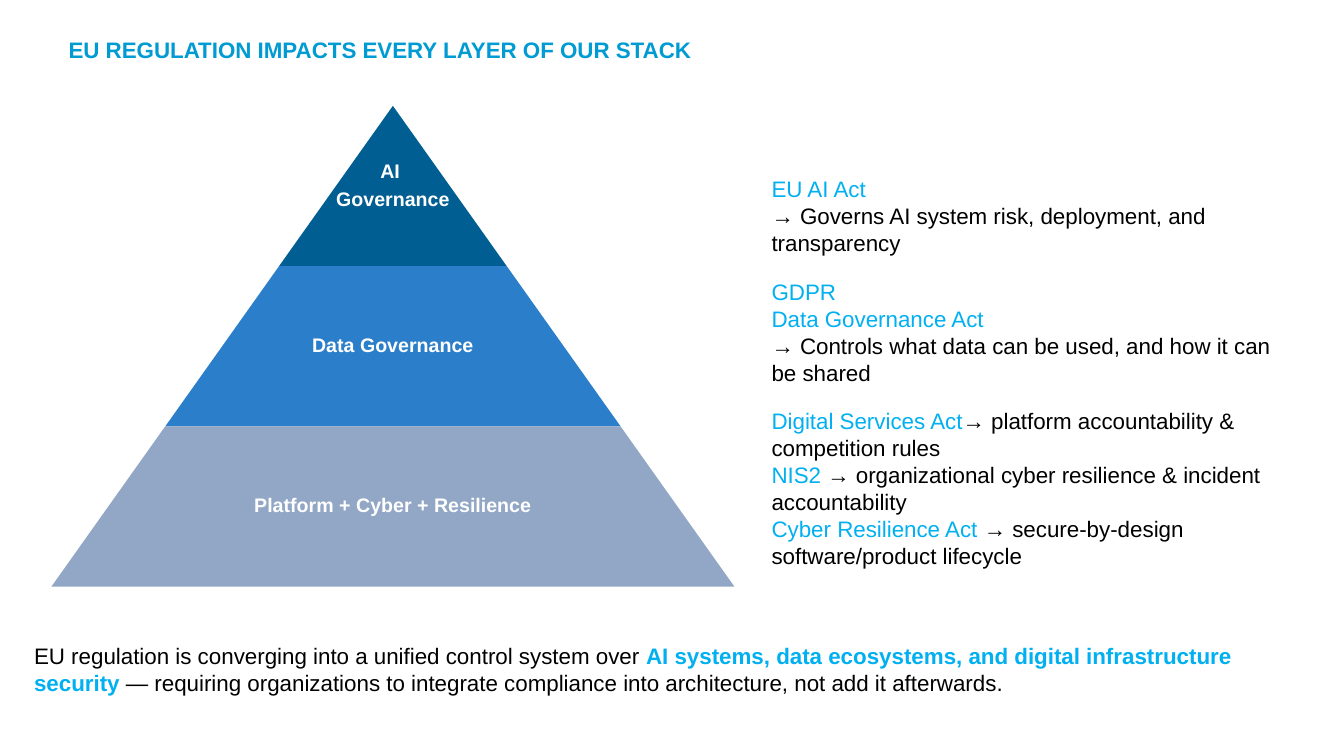
from dataclasses import dataclass

import pptx
import pptx.dml.color
import pptx.enum.shapes
import pptx.enum.text
import pptx.util

Inches = pptx.util.Inches
Pt = pptx.util.Pt
Anchor = pptx.enum.text.MSO_ANCHOR
Align = pptx.enum.text.PP_ALIGN

COLORS = {
    "title": "009BD2",
    "accent": "00B0F0",
    "body": "000000",
    "label": "FFFFFF",
    "ai": "005E93",
    "data": "2B7EC9",
    "platform": "91A7C5",
}
FONT = "Arial"
APEX_X, APEX_Y = 3.9, 1.05
TIER_HEIGHT, TIER_INSET = 1.59, 1.13
REGULATION_LEFT, REGULATION_WIDTH = 7.56, 5.29


@dataclass(frozen=True)
class Span:
    text: str
    color: str = "body"
    bold: bool = False
    break_after: bool = False


@dataclass(frozen=True)
class TextBlock:
    left: float
    top: float
    width: float
    height: float
    paragraphs: list[list[Span]]
    size: float = 16
    margins: tuple[float, float] = (0.1, 0.05)
    anchor: Anchor = Anchor.TOP
    align: Align = Align.LEFT
    line_spacing: float = 1.0
    space_before: float = 0


@dataclass(frozen=True)
class Tier:
    lines: list[str]
    color: str
    label_width: float


TIERS = [
    Tier(["AI ", "Governance"], "ai", 2.26),
    Tier(["Data Governance"], "data", 2.94),
    Tier(["Platform + Cyber + Resilience"], "platform", 4.4),
]

TEXT_BLOCKS = [
    TextBlock(0.24, 6.32, 12.96, 0.64, [[
        Span("EU regulation is converging into a unified control system over "),
        Span("AI systems, data ecosystems, and digital infrastructure security ", "accent", True),
        Span("— requiring organizations to integrate compliance into architecture, "
             "not add it afterwards."),
    ]]),
    TextBlock(REGULATION_LEFT, 1.69, REGULATION_WIDTH, 0.91, [[
        Span("EU AI Act", "accent", break_after=True),
        Span("→ Governs AI system risk, deployment, and transparency"),
    ]]),
    TextBlock(REGULATION_LEFT, 2.71, REGULATION_WIDTH, 1.18, [
        [Span("GDPR", "accent")],
        [
            Span("Data Governance Act", "accent", break_after=True),
            Span("→ Controls what data can be used, and how it can be shared"),
        ],
    ]),
    TextBlock(REGULATION_LEFT, 3.98, REGULATION_WIDTH, 1.72, [
        [
            Span("Digital Services Act", "accent"),
            Span("→ platform accountability & competition rules"),
        ],
        [
            Span("NIS2", "accent"),
            Span(" → organizational cyber resilience & incident accountability"),
        ],
        [
            Span("Cyber Resilience Act", "accent"),
            Span(" → secure-by-design software/product lifecycle"),
        ],
    ], anchor=Anchor.MIDDLE),
    TextBlock(0.68, 0.39, 8.38, 0.67, [[
        Span("EU REGULATION IMPACTS EVERY LAYER OF OUR STACK", "title", True),
    ]], margins=(0, 0), line_spacing=0.9),
]


def rgb(name: str) -> pptx.dml.color.RGBColor:
    return pptx.dml.color.RGBColor.from_string(COLORS[name])


def draw_text(page: pptx.slide.Slide, block: TextBlock) -> None:
    box = page.shapes.add_textbox(
        Inches(block.left), Inches(block.top), Inches(block.width), Inches(block.height))
    frame = box.text_frame
    frame.word_wrap = True
    frame.vertical_anchor = block.anchor
    frame.margin_left = frame.margin_right = Inches(block.margins[0])
    frame.margin_top = frame.margin_bottom = Inches(block.margins[1])
    for index, spans in enumerate(block.paragraphs):
        para = frame.add_paragraph() if index else frame.paragraphs[0]
        para.alignment = block.align
        para.line_spacing = block.line_spacing
        para.space_before = Pt(block.space_before if index else 0)
        for span in spans:
            run = para.add_run()
            run.text = span.text
            run.font.name = FONT
            run.font.size = Pt(block.size)
            run.font.bold = span.bold
            run.font.color.rgb = rgb(span.color)
            if span.break_after:
                para.add_line_break()


def draw_tier(page: pptx.slide.Slide, tier: Tier, index: int) -> None:
    top = APEX_Y + index * TIER_HEIGHT
    half_width = (index + 1) * TIER_INSET
    shape = page.shapes.add_shape(
        pptx.enum.shapes.MSO_SHAPE.TRAPEZOID,
        Inches(APEX_X - half_width), Inches(top),
        Inches(2 * half_width), Inches(TIER_HEIGHT))
    shape.adjustments[0] = TIER_INSET / TIER_HEIGHT
    shape.shadow.inherit = False
    shape.fill.solid()
    shape.fill.fore_color.rgb = rgb(tier.color)
    shape.line.fill.background()
    draw_text(page, TextBlock(
        APEX_X - tier.label_width / 2, top, tier.label_width, TIER_HEIGHT,
        [[Span(line, "label", True)] for line in tier.lines],
        size=14, margins=(0.02, 0.02), anchor=Anchor.MIDDLE,
        align=Align.CENTER, line_spacing=0.9, space_before=4.9))


def main() -> None:
    deck = pptx.Presentation()
    deck.slide_width = Inches(13.34)
    deck.slide_height = Inches(7.5)
    page = deck.slides.add_slide(deck.slide_layouts[6])
    for index, tier in enumerate(TIERS):
        draw_tier(page, tier, index)
    for block in TEXT_BLOCKS:
        draw_text(page, block)
    deck.save("out.pptx")


if __name__ == "__main__":
    main()
